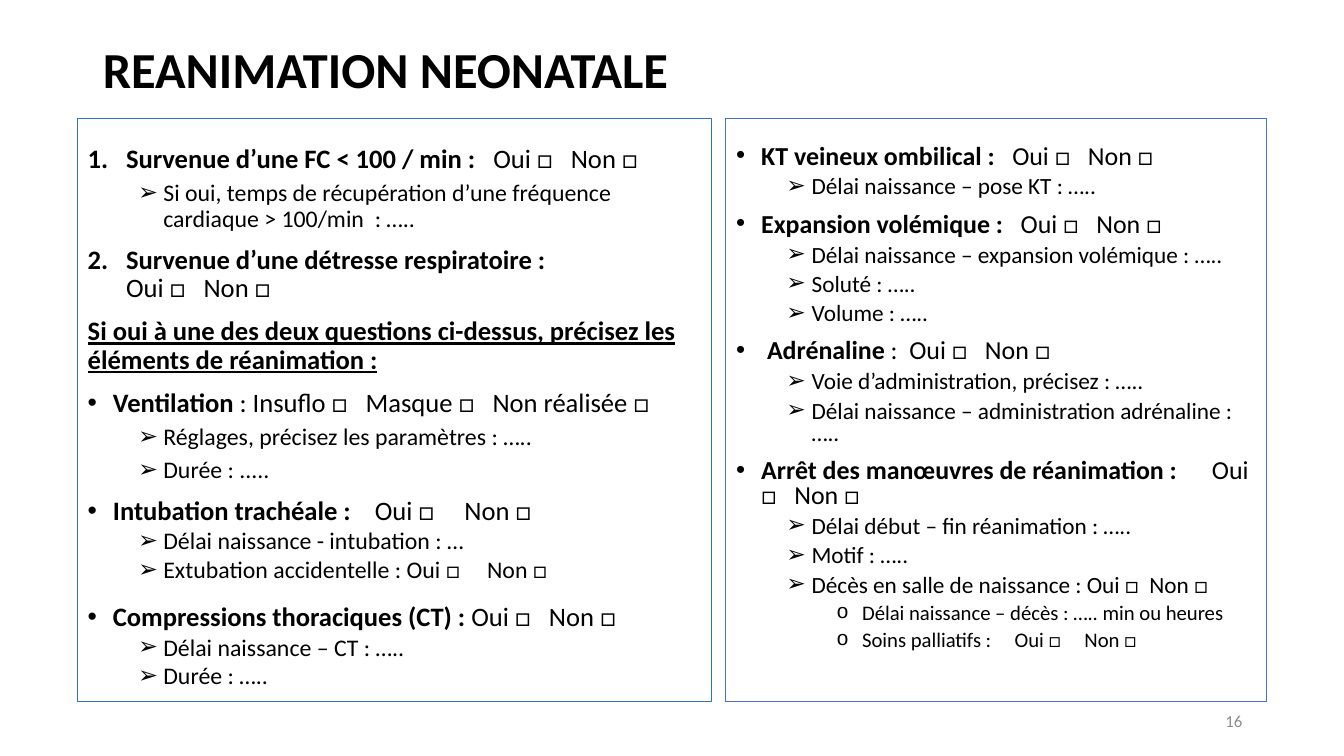
import pptx
import pptx.util
import pptx.dml.color
import pptx.enum.text
import lxml.etree

DRAWING = "{http://schemas.openxmlformats.org/drawingml/2006/main}"
Inches = pptx.util.Inches
Pt = pptx.util.Pt


def paint(color_format, hex_color):
    color_format.rgb = pptx.dml.color.RGBColor.from_string(hex_color)


def write(paragraph, text, size=18, color="000000", bold=False, underline=None,
          align="LEFT", spacing=1, before=0):
    paragraph.alignment = getattr(pptx.enum.text.PP_ALIGN, align)
    paragraph.line_spacing = spacing
    paragraph.space_before = Pt(before)
    paragraph.space_after = Pt(0)
    for index, line in enumerate(text.split("\n")):
        if index:
            paragraph.add_line_break()
        strong, _, plain = line.partition("|")
        for words, is_strong in ((strong, bold), (plain, False)):
            if words:
                run = paragraph.add_run()
                run.text = words
                run.font.name = "Calibri"
                run.font.size = Pt(size)
                run.font.bold = is_strong
                run.font.underline = underline
                paint(run.font.color, color)


levels = {
    "number": (0, 0.38, 0.38, "1."),
    "heading": (0, 0, 0, None),
    "topic": (0, 0.25, 0.25, "•"),
    "detail": (1, 0.75, 0.25, "➢"),
    "subdetail": (2, 1.25, 0.25, "o"),
}

assessment = [
    ("number", "Survenue d’une FC < 100 / min :   |Oui □   Non □", 0.9, 0),
    ("detail", "Si oui, temps de récupération d’une fréquence cardiaque > 100/min  : …..", 0.9, 5),
    ("number", "Survenue d’une détresse respiratoire :\n|Oui □   Non □", 0.9, 10),
    ("heading", "Si oui à une des deux questions ci-dessus, précisez les éléments de réanimation :", 0.9, 10),
    ("topic", "Ventilation |: Insuflo □   Masque □   Non réalisée □", 0.9, 10),
    ("detail", "Réglages, précisez les paramètres : …..", 0.9, 5),
    ("detail", "Durée : .....", 0.9, 5),
    ("topic", "Intubation trachéale :    |Oui □     Non □", 0.9, 10),
    ("detail", "Délai naissance - intubation : …", 1, 0),
    ("detail", "Extubation accidentelle : Oui □     Non □", 1, 0),
    ("topic", "Compressions thoraciques (CT) : |Oui □   Non □", 1, 12.2),
    ("detail", "Délai naissance – CT : …..", 1, 0),
    ("detail", "Durée : …..", 1, 0),
]

treatment = [
    ("topic", "KT veineux ombilical :   |Oui □   Non □", 0.8, 0),
    ("detail", "Délai naissance – pose KT : …..", 0.8, 5),
    ("topic", "Expansion volémique :   |Oui □   Non □", 0.8, 10),
    ("detail", "Délai naissance – expansion volémique : …..", 0.8, 5),
    ("detail", "Soluté : …..", 0.8, 5),
    ("detail", "Volume : …..", 0.8, 5),
    ("topic", " Adrénaline |:  Oui □   Non □", 0.8, 10),
    ("detail", "Voie d’administration, précisez : …..", 0.8, 5),
    ("detail", "Délai naissance – administration adrénaline : …..", 0.8, 5),
    ("topic", "Arrêt des manœuvres de réanimation :      |Oui □   Non □", 0.8, 10),
    ("detail", "Délai début – fin réanimation : …..", 0.8, 5),
    ("detail", "Motif : …..", 0.8, 5),
    ("detail", "Décès en salle de naissance : Oui □  Non □", 0.8, 5),
    ("subdetail", "Délai naissance – décès : ….. min ou heures", 0.8, 5),
    ("subdetail", "Soins palliatifs :     Oui □     Non □", 0.8, 5),
]

deck = pptx.Presentation()
deck.slide_width = Inches(13.33)
deck.slide_height = Inches(7.5)
slide = deck.slides.add_slide(deck.slide_layouts[3])

title = slide.shapes.title
title.left, title.top, title.width, title.height = map(Inches, (0.92, 0.4, 11.5, 0.78))
title.text_frame.auto_size = pptx.enum.text.MSO_AUTO_SIZE.NONE
title.text_frame.vertical_anchor = pptx.enum.text.MSO_ANCHOR.TOP
write(title.text_frame.paragraphs[0], "REANIMATION NEONATALE", size=36, bold=True, spacing=0.9)

panel_top, panel_height = 1.18, 5.78
panels = [
    (1, 0.77, 6.29, "2E75B6", (19, 17), assessment),
    (2, 7.2, 5.36, "4472C4", (18.5, 16.6, 14.8), treatment),
]
for position, left, width, border, sizes, questions in panels:
    panel = slide.placeholders[position]
    panel.left, panel.top = Inches(left), Inches(panel_top)
    panel.width, panel.height = Inches(width), Inches(panel_height)
    paint(panel.line.color, border)
    panel.line.width = Pt(0.75)
    frame = panel.text_frame
    frame.auto_size = pptx.enum.text.MSO_AUTO_SIZE.NONE
    frame.vertical_anchor = pptx.enum.text.MSO_ANCHOR.TOP
    frame.margin_top = Inches(0.26)
    for index, (kind, question, spacing, before) in enumerate(questions):
        level, indent, hanging, bullet = levels[kind]
        paragraph = frame.add_paragraph() if index else frame.paragraphs[0]
        paragraph.level = level
        write(paragraph, question, size=sizes[level], bold=level == 0,
              underline=kind == "heading", spacing=spacing, before=before)
        properties = paragraph._p.get_or_add_pPr()
        properties.set("marL", str(Inches(indent)))
        properties.set("indent", str(-Inches(hanging)))
        if bullet == "1.":
            lxml.etree.SubElement(properties, DRAWING + "buFont", typeface="+mj-lt")
            lxml.etree.SubElement(properties, DRAWING + "buAutoNum", type="arabicPeriod")
        elif bullet:
            lxml.etree.SubElement(properties, DRAWING + "buChar", char=bullet)
        else:
            lxml.etree.SubElement(properties, DRAWING + "buNone")

page_number = slide.shapes.add_textbox(*map(Inches, (9.42, 6.95, 3, 0.4))).text_frame
page_number.word_wrap = True
page_number.vertical_anchor = pptx.enum.text.MSO_ANCHOR.MIDDLE
write(page_number.paragraphs[0], "16", size=12, color="8C8C8C", align="RIGHT")

deck.save("out.pptx")
